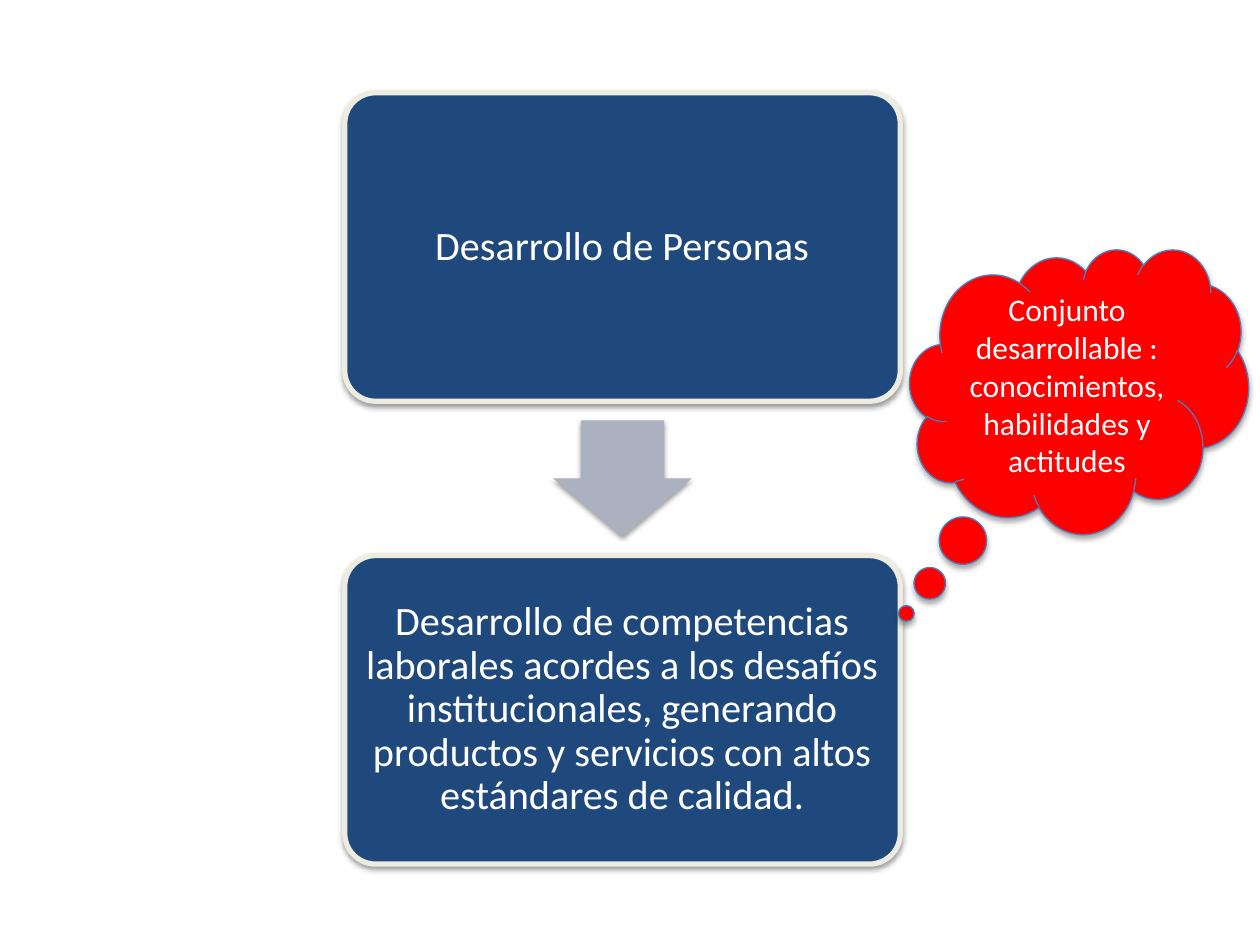
import pptx
import pptx.dml.color
import pptx.enum.shapes
import pptx.enum.text
import pptx.oxml.ns
import pptx.util
from lxml import etree

Cm = pptx.util.Cm
Pt = pptx.util.Pt
SHAPES = pptx.enum.shapes.MSO_SHAPE

COLOURS = {
    "box": "1F497D",
    "box_line": "EEECE1",
    "arrow": "ACB1BF",
    "cloud": "FF0000",
    "cloud_line": "4B7EBC",
    "text": "FFFFFF",
    "shadow": "000000",
}

BOX_LEFT, BOX_WIDTH, BOX_HEIGHT = 6.95, 11.2, 6.22
BOX_TOP, BOX_PITCH = 1.87, 9.33
ARROW_WIDTH, ARROW_HEIGHT = 2.79, 2.34
BOX_TEXTS = [
    "Desarrollo de Personas",
    "Desarrollo de competencias laborales acordes a los desafíos "
    "institucionales, generando productos y servicios con altos "
    "estándares de calidad.",
]
CLOUD_TEXTS = ["Conjunto desarrollable :", "conocimientos, habilidades y actitudes"]


def rgb(name):
    return pptx.dml.color.RGBColor.from_string(COLOURS[name])


def add_shadow(shape, distance, opacity):
    """Cast a soft shadow straight down; opacity is a percentage."""
    shape.shadow.inherit = False
    qn = pptx.oxml.ns.qn
    effects = shape.element.spPr.find(qn("a:effectLst"))
    shadow = etree.SubElement(
        effects, qn("a:outerShdw"), blurRad=str(Pt(3.1)), dist=str(Pt(distance)),
        dir=str(90 * 60000), rotWithShape="0")
    colour = etree.SubElement(shadow, qn("a:srgbClr"), val=COLOURS["shadow"])
    etree.SubElement(colour, qn("a:alpha"), val=str(opacity * 1000))


def add_filled_shape(slide, kind, bounds, adjustments, fill, line=None, line_width=0,
                     shadow_distance=1.6, shadow_opacity=38):
    shape = slide.shapes.add_shape(kind, *(Cm(length) for length in bounds))
    for index, value in enumerate(adjustments):
        shape.adjustments[index] = value
    shape.fill.solid()
    shape.fill.fore_color.rgb = rgb(fill)
    if line:
        shape.line.color.rgb = rgb(line)
        shape.line.width = Pt(line_width)
    else:
        shape.line.fill.background()
    add_shadow(shape, shadow_distance, shadow_opacity)
    return shape


def write_centred(shape, texts, size, line_spacing=None):
    frame = shape.text_frame
    frame.word_wrap = True
    frame.vertical_anchor = pptx.enum.text.MSO_ANCHOR.MIDDLE
    for index, text in enumerate(texts):
        paragraph = frame.add_paragraph() if index else frame.paragraphs[0]
        paragraph.alignment = pptx.enum.text.PP_ALIGN.CENTER
        if line_spacing:
            paragraph.line_spacing = line_spacing
        run = paragraph.add_run()
        run.text = text
        run.font.name = "Calibri"
        run.font.size = Pt(size)
        run.font.color.rgb = rgb("text")


def add_box(slide, top, text):
    box = add_filled_shape(
        slide, SHAPES.ROUNDED_RECTANGLE, (BOX_LEFT, top, BOX_WIDTH, BOX_HEIGHT),
        [0.1], "box", "box_line", 3)
    frame = box.text_frame
    # The rounded corners add their own inset to these margins.
    frame.margin_left = frame.margin_right = Cm(0.2)
    frame.margin_top = frame.margin_bottom = Cm(0.2)
    write_centred(box, [text], 23, 0.9)


def add_down_arrow(slide, box_top):
    """Centre an arrow in the gap above the box that starts at box_top."""
    gap = BOX_PITCH - BOX_HEIGHT
    left = BOX_LEFT + (BOX_WIDTH - ARROW_WIDTH) / 2
    top = box_top - (gap + ARROW_HEIGHT) / 2
    add_filled_shape(slide, SHAPES.DOWN_ARROW,
                     (left, top, ARROW_WIDTH, ARROW_HEIGHT), [0.6, 0.5], "arrow")


def add_cloud(slide):
    cloud = add_filled_shape(
        slide, SHAPES.CLOUD_CALLOUT, (18.34, 5.02, 6.83, 5.74), [-0.51, 0.78],
        "cloud", "cloud_line", 0.75, shadow_distance=1.8, shadow_opacity=35)
    write_centred(cloud, CLOUD_TEXTS, 18)


def main():
    presentation = pptx.Presentation()
    presentation.slide_width = Cm(25.4)
    presentation.slide_height = Cm(19.05)
    slide = presentation.slides.add_slide(presentation.slide_layouts[6])
    for index, text in enumerate(BOX_TEXTS):
        top = BOX_TOP + index * BOX_PITCH
        if index:
            add_down_arrow(slide, top)
        add_box(slide, top, text)
    add_cloud(slide)
    presentation.save("out.pptx")


if __name__ == "__main__":
    main()
